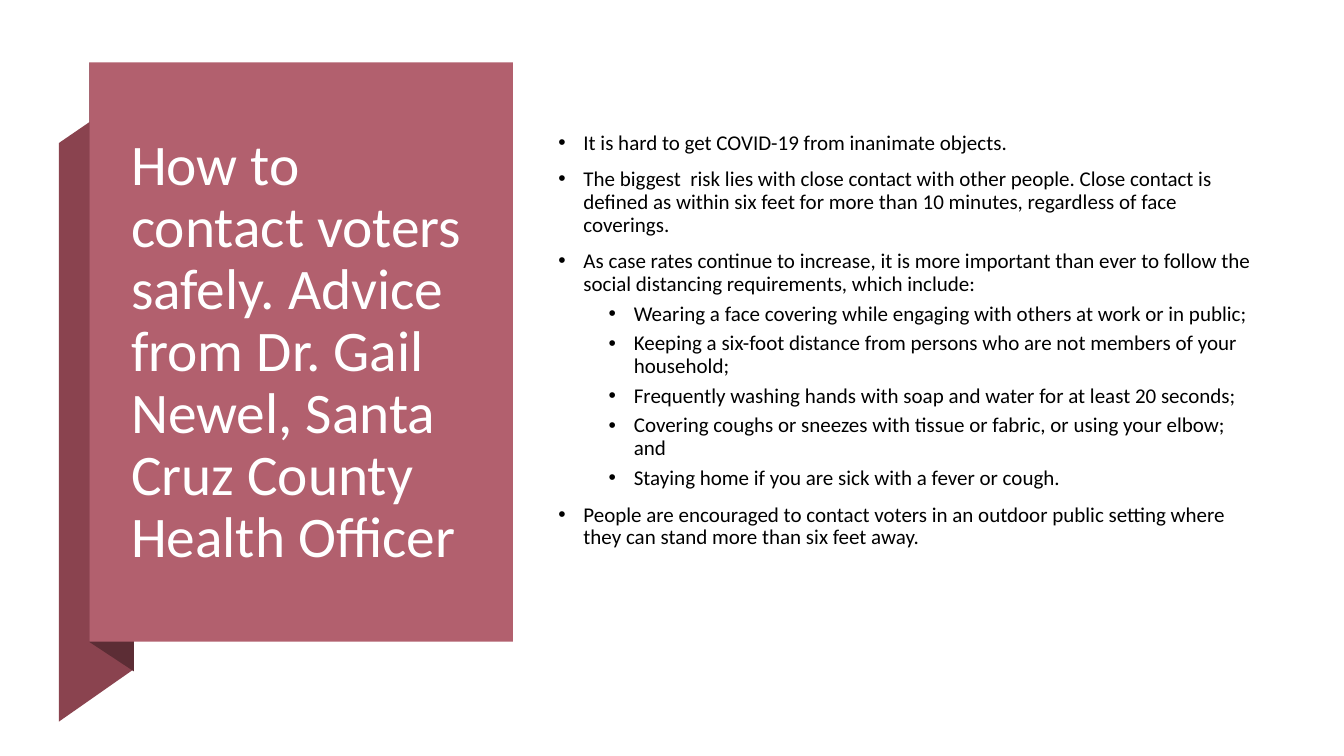
from dataclasses import dataclass

from lxml.etree import SubElement
from pptx import Presentation
from pptx.dml.color import RGBColor
from pptx.enum.shapes import MSO_SHAPE
from pptx.enum.text import MSO_ANCHOR, MSO_AUTO_SIZE, PP_ALIGN
from pptx.oxml.ns import qn
from pptx.shapes.base import BaseShape
from pptx.slide import Slide
from pptx.text.text import TextFrame, _Paragraph
from pptx.util import Emu, Inches, Pt

WIDE, TALL = Inches(13.333), Inches(7.5)
ROSE = RGBColor(0xB2, 0x60, 0x6E)
WINE = RGBColor(0x8A, 0x43, 0x4F)
PLUM = RGBColor(0x5C, 0x2D, 0x35)
WHITE = RGBColor(0xFF, 0xFF, 0xFF)
BLACK = RGBColor(0, 0, 0)
FACE = "Calibri"


@dataclass(frozen=True)
class Area:
    left: float
    top: float
    width: float
    height: float


@dataclass(frozen=True)
class Fold:
    color: RGBColor
    points: tuple[tuple[float, float], ...]


@dataclass(frozen=True)
class Point:
    text: str
    level: int = 0


PANEL = Area(6.66, 8.27, 31.5, 76.6)
HEAD = Area(9, 12.93, 26.48, 67.47)
BODY = Area(40.8, 12.93, 53.55, 67.33)

FOLDS = (
    Fold(WINE, ((4.38, 95.47), (9.96, 88.53), (9.96, 12.13), (4.38, 18.93))),
    Fold(PLUM, ((6.66, 84.93), (9.96, 88.8), (9.96, 12), (6.66, 8.27))),
)

TITLE = "How to contact voters safely. Advice from Dr. Gail Newel, Santa Cruz County Health Officer"
POINTS = (
    Point("It is hard to get COVID-19 from inanimate objects."),
    Point("The biggest  risk lies with close contact with other people. Close contact is defined as within six feet for more than 10 minutes, regardless of face coverings."),
    Point("As case rates continue to increase, it is more important than ever to follow the social distancing requirements, which include:"),
    Point("Wearing a face covering while engaging with others at work or in public;", 1),
    Point("Keeping a six-foot distance from persons who are not members of your household;", 1),
    Point("Frequently washing hands with soap and water for at least 20 seconds;", 1),
    Point("Covering coughs or sneezes with tissue or fabric, or using your elbow; and", 1),
    Point("Staying home if you are sick with a fever or cough.", 1),
    Point("People are encouraged to contact voters in an outdoor public setting where they can stand more than six feet away."),
)


def across(share: float) -> Emu:
    return Emu(round(WIDE * share / 100))


def down(share: float) -> Emu:
    return Emu(round(TALL * share / 100))


def frame(area: Area) -> tuple[Emu, Emu, Emu, Emu]:
    return across(area.left), down(area.top), across(area.width), down(area.height)


def paint(shape: BaseShape, color: RGBColor) -> None:
    shape.shadow.inherit = False
    shape.fill.solid()
    shape.fill.fore_color.rgb = color
    shape.line.fill.background()


def draw_fold(slide: Slide, fold: Fold) -> None:
    spots = [(across(x), down(y)) for x, y in fold.points]
    pen = slide.shapes.build_freeform(*spots[0])
    pen.add_line_segments(spots[1:], close=True)
    paint(pen.convert_to_shape(), fold.color)


def set_frame(text: TextFrame) -> None:
    text.word_wrap = True
    text.auto_size = MSO_AUTO_SIZE.NONE
    text.vertical_anchor = MSO_ANCHOR.MIDDLE


def style(para: _Paragraph, size: float, color: RGBColor) -> None:
    para.alignment = PP_ALIGN.LEFT
    para.line_spacing = 0.9
    para.font.name = FACE
    para.font.size = Pt(size)
    para.font.color.rgb = color


def add_bullet(para: _Paragraph, level: int) -> None:
    para.level = level
    props = para._p.get_or_add_pPr()
    props.set("marL", str(Inches(0.25 + 0.5 * level)))
    props.set("indent", str(Inches(-0.25)))
    SubElement(props, qn("a:buFont")).set("typeface", "Arial")
    SubElement(props, qn("a:buChar")).set("char", "•")


def draw_title(slide: Slide) -> None:
    title = slide.shapes.title
    title.left, title.top, title.width, title.height = frame(HEAD)
    slide.shapes._spTree.append(title._element)
    title.text = TITLE
    set_frame(title.text_frame)
    style(title.text_frame.paragraphs[0], 41, WHITE)


def draw_body(slide: Slide) -> None:
    text = slide.shapes.add_textbox(*frame(BODY)).text_frame
    set_frame(text)
    text.margin_bottom = Inches(0.28)
    for rank, point in enumerate(POINTS):
        para = text.add_paragraph() if rank else text.paragraphs[0]
        para.text = point.text
        add_bullet(para, point.level)
        style(para, 15, BLACK)
        if rank:
            para.space_before = Pt(5 if point.level else 10)


def main() -> None:
    deck = Presentation()
    deck.slide_width, deck.slide_height = WIDE, TALL
    slide = deck.slides.add_slide(deck.slide_layouts[5])
    for fold in FOLDS:
        draw_fold(slide, fold)
    paint(slide.shapes.add_shape(MSO_SHAPE.RECTANGLE, *frame(PANEL)), ROSE)
    draw_title(slide)
    draw_body(slide)
    deck.save("out.pptx")


if __name__ == "__main__":
    main()
